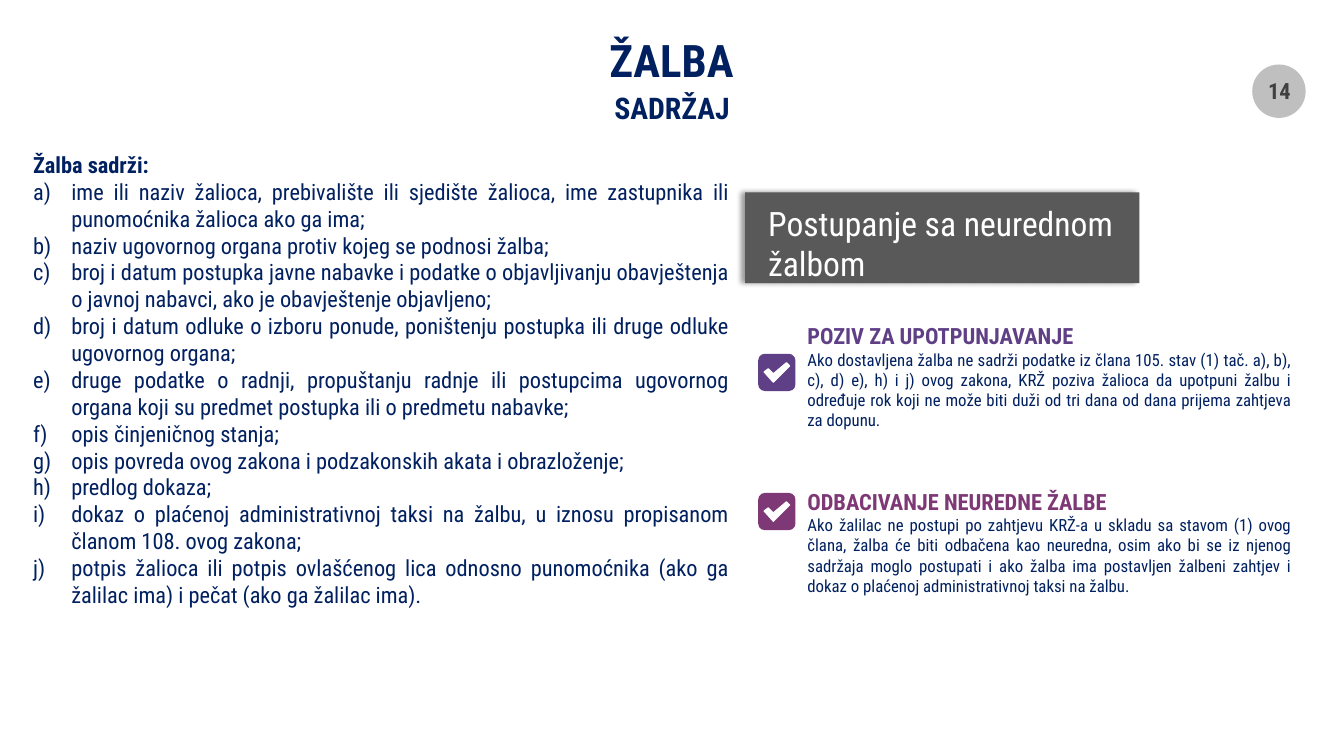
from dataclasses import dataclass

from lxml import etree
from pptx import Presentation
from pptx.dml.color import RGBColor
from pptx.enum.shapes import MSO_SHAPE
from pptx.enum.text import MSO_ANCHOR, PP_ALIGN
from pptx.oxml import parse_xml
from pptx.oxml.ns import qn
from pptx.util import Inches, Pt

LEFT, CENTER, JUSTIFY = PP_ALIGN.LEFT, PP_ALIGN.CENTER, PP_ALIGN.JUSTIFY
TOP, MIDDLE = MSO_ANCHOR.TOP, MSO_ANCHOR.MIDDLE
RECT, OVAL, ROUNDED = MSO_SHAPE.RECTANGLE, MSO_SHAPE.OVAL, MSO_SHAPE.ROUNDED_RECTANGLE


@dataclass(frozen=True)
class Theme:
    font: str = "Roboto Condensed"
    navy: str = "002060"
    purple: str = "5F3F85"
    plum: str = "7E3875"
    white: str = "FFFFFF"
    banner: str = "595959"
    badge: str = "BFBFBF"
    badge_text: str = "404040"
    title: float = 32
    subtitle: float = 21.3
    banner_size: float = 24
    body: float = 16
    detail: float = 12


@dataclass(frozen=True)
class Step:
    heading: str
    detail: str
    color: str
    top: float
    check_top: float


@dataclass(frozen=True)
class Label:
    text: str
    box: tuple[float, float, float, float]
    size: float
    color: str
    bold: bool = False
    align: PP_ALIGN = LEFT
    anchor: MSO_ANCHOR = TOP
    margins: tuple[float, float] = (0.1, 0.05)


T = Theme()

LABELS = [
    Label("14", (12.38, 0.66, 0.62, 0.48), T.body, T.badge_text, True, CENTER, MIDDLE),
    Label("ŽALBA", (3.19, 0.29, 6.94, 0.61), T.title, T.navy, True, CENTER, MIDDLE, (0, 0)),
    Label("SADRŽAJ", (4.77, 0.92, 3.79, 0.29), T.subtitle, T.navy, True, CENTER, MIDDLE, (0, 0)),
    Label("Postupanje sa neurednom žalbom", (7.52, 1.96, 3.91, 0.91), T.banner_size, T.white),
]

CONTENTS = [
    "ime ili naziv žalioca, prebivalište ili sjedište žalioca, ime zastupnika ili "
    "punomoćnika žalioca ako ga ima;",
    "naziv ugovornog organa protiv kojeg se podnosi žalba;",
    "broj i datum postupka javne nabavke i podatke o objavljivanju obavještenja o javnoj "
    "nabavci, ako je obavještenje objavljeno;",
    "broj i datum odluke o izboru ponude, poništenju postupka ili druge odluke ugovornog organa;",
    "druge podatke o radnji, propuštanju radnje ili postupcima ugovornog organa koji su "
    "predmet postupka ili o predmetu nabavke;",
    "opis činjeničnog stanja;",
    "opis povreda ovog zakona i podzakonskih akata i obrazloženje;",
    "predlog dokaza;",
    "dokaz o plaćenoj administrativnoj taksi na žalbu, u iznosu propisanom članom 108. ovog zakona;",
    "potpis žalioca ili potpis ovlašćenog lica odnosno punomoćnika (ako ga žalilac ima) i "
    "pečat (ako ga žalilac ima).",
]

STEPS = [
    Step("POZIV ZA UPOTPUNJAVANJE",
         "Ako dostavljena žalba ne sadrži podatke iz člana 105. stav (1) tač. a), b), c), d) e), "
         "h) i j) ovog zakona, KRŽ poziva žalioca da upotpuni žalbu i određuje rok koji ne može "
         "biti duži od tri dana od dana prijema zahtjeva za dopunu.",
         T.purple, 3.15, 3.51),
    Step("ODBACIVANJE NEUREDNE ŽALBE",
         "Ako žalilac ne postupi po zahtjevu KRŽ-a u skladu sa stavom (1) ovog člana, žalba će "
         "biti odbačena kao neuredna, osim ako bi se iz njenog sadržaja moglo postupati i ako "
         "žalba ima postavljen žalbeni zahtjev i dokaz o plaćenoj administrativnoj taksi na žalbu.",
         T.plum, 4.79, 4.89),
]

# Tick outline, in inches from the corner of its box
TICK = [(0.31, 0.12), (0.28, 0.09), (0.15, 0.2), (0.1, 0.15), (0.06, 0.18), (0.15, 0.28)]

SHADOW = (
    '<a:effectLst xmlns:a="http://schemas.openxmlformats.org/drawingml/2006/main">'
    '<a:outerShdw blurRad="50800" dist="38100" dir="10800000" algn="r" rotWithShape="0">'
    '<a:srgbClr val="000000"><a:alpha val="40000"/></a:srgbClr>'
    '</a:outerShdw></a:effectLst>'
)


def paint(s, color: str) -> None:
    s.shadow.inherit = False
    s.fill.solid()
    s.fill.fore_color.rgb = RGBColor.from_string(color)
    s.line.fill.background()


def add_shape(sp, kind: MSO_SHAPE, box: tuple[float, ...], color: str):
    s = sp.add_shape(kind, *map(Inches, box))
    paint(s, color)
    return s


def add_run(p, text: str, size: float, color: str, bold: bool = False) -> None:
    r = p.add_run()
    r.text = text
    r.font.name = T.font
    r.font.size = Pt(size)
    r.font.bold = bold
    r.font.color.rgb = RGBColor.from_string(color)


def add_label(sp, label: Label):
    tf = sp.add_textbox(*map(Inches, label.box)).text_frame
    tf.word_wrap = True
    tf.vertical_anchor = label.anchor
    side, edge = map(Inches, label.margins)
    tf.margin_left = tf.margin_right = side
    tf.margin_top = tf.margin_bottom = edge
    p = tf.paragraphs[0]
    p.alignment = label.align
    add_run(p, label.text, label.size, label.color, label.bold)
    return tf


def add_lettered(tf, text: str) -> None:
    p = tf.add_paragraph()
    p.alignment = JUSTIFY
    pPr = p._p.get_or_add_pPr()
    pPr.set("marL", str(Inches(0.38)))
    pPr.set("indent", str(-Inches(0.38)))
    etree.SubElement(pPr, qn("a:buFont"), typeface="+mj-lt")
    etree.SubElement(pPr, qn("a:buAutoNum"), type="alphaLcParenR")
    add_run(p, text, T.body, T.navy)


def add_checkbox(sp, left: float, top: float, color: str) -> None:
    s = add_shape(sp, ROUNDED, (left, top, 0.37, 0.37), color)
    s.adjustments[0] = 0.18
    points = [(Inches(left + x), Inches(top + y)) for x, y in TICK]
    builder = sp.build_freeform(*points[0])
    builder.add_line_segments(points[1:], close=True)
    tick = builder.convert_to_shape()
    paint(tick, T.white)
    # A thin outline softens the corners of the tick
    tick.line.color.rgb = RGBColor.from_string(T.white)
    tick.line.width = Pt(1)
    etree.SubElement(tick.line._get_or_add_ln(), qn("a:round"))


def add_step(sp, step: Step) -> None:
    add_checkbox(sp, 7.52, step.check_top, step.color)
    add_label(sp, Label(step.detail, (7.91, step.top + 0.27, 5, 0.91), T.detail, T.navy, align=JUSTIFY))
    add_label(sp, Label(step.heading, (7.91, step.top, 3.94, 0.37), T.body, step.color, True))


def main() -> None:
    prs = Presentation()
    prs.slide_width, prs.slide_height = Inches(13.33), Inches(7.5)
    sp = prs.slides.add_slide(prs.slide_layouts[6]).shapes

    # Page badge and shadowed banner
    add_shape(sp, OVAL, (12.42, 0.64, 0.53, 0.53), T.badge)
    banner = add_shape(sp, RECT, (7.39, 1.91, 3.91, 0.9), T.banner)
    spPr = banner._element.spPr
    spPr.replace(spPr.find(qn("a:effectLst")), parse_xml(SHADOW))

    # Titles, page number and banner text
    for label in LABELS:
        add_label(sp, label)

    # Lettered contents of the appeal
    tf = add_label(sp, Label("Žalba sadrži:", (0.23, 1.45, 7.1, 4.95), T.body, T.navy, True, JUSTIFY))
    for text in CONTENTS:
        add_lettered(tf, text)

    # Steps for an irregular appeal
    for step in STEPS:
        add_step(sp, step)

    prs.save("out.pptx")


if __name__ == "__main__":
    main()
